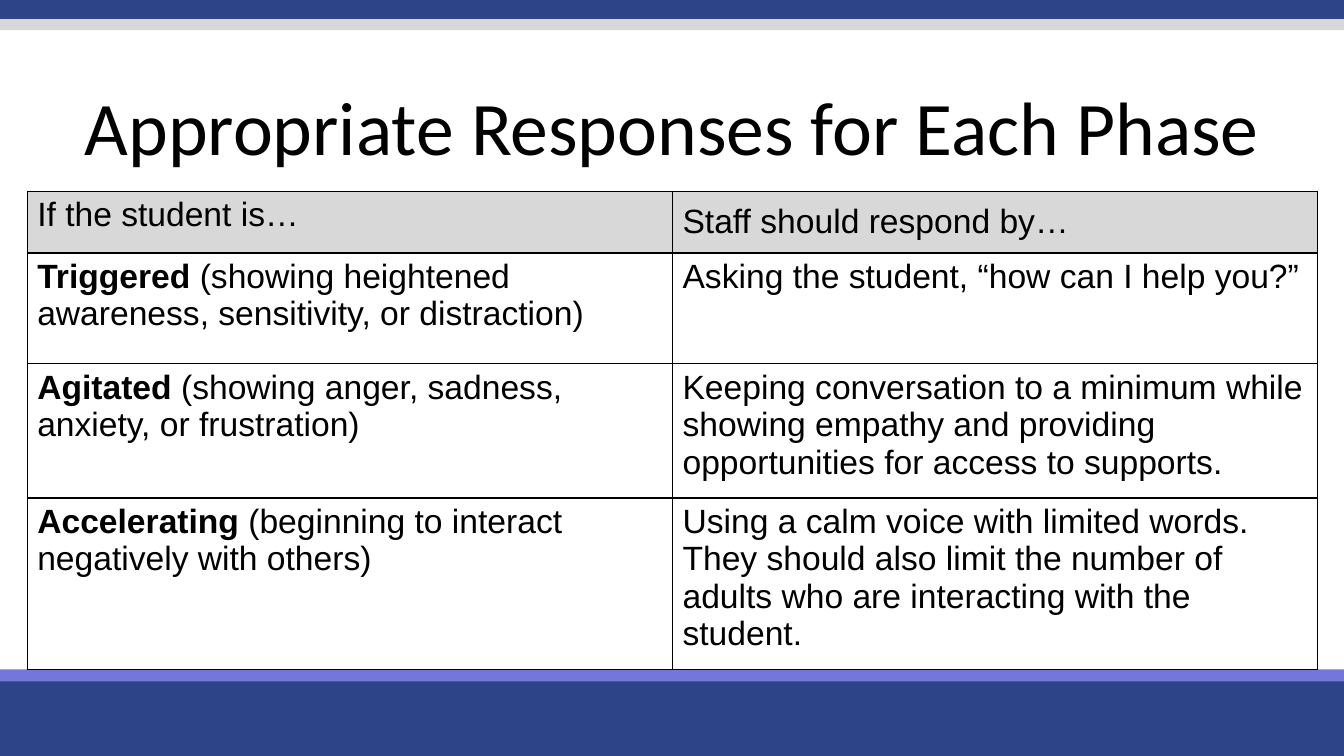
from pptx import Presentation
from pptx.dml.color import RGBColor
from pptx.enum import shapes, text
from pptx.oxml import parse_xml
from pptx.oxml.ns import nsdecls
from pptx.util import Inches, Pt

# Content: each cell is a list of (words, bold) runs
TITLE = "Appropriate Responses for Each Phase"
ROWS = [
    ([("If the student is…", False)],
     [("Staff should respond by…", False)]),
    ([("Triggered", True),
      (" (showing heightened awareness, sensitivity, or distraction)", False)],
     [("Asking the student, “how can I help you?”", False)]),
    ([("Agitated", True),
      (" (showing anger, sadness, anxiety, or frustration)", False)],
     [("Keeping conversation to a minimum while showing empathy and "
       "providing opportunities for access to supports.", False)]),
    ([("Accelerating ", True),
      ("(beginning to interact negatively with others)", False)],
     [("Using a calm voice with limited words. They should also limit the "
       "number of adults who are interacting with the student.", False)]),
]
HEIGHTS = [0.61, 1.1, 1.33, 1.58]
WIDE, HIGH = 13.33, 7.5
LEFT, TOP, COL = 0.27, 1.9, 6.4

THEME = {
    "navy": "2E4488", "violet": "7476DA", "grey": "D8D8D8",
    "white": "FFFFFF", "black": "000000",
    "head": "Calibri", "body": "Arial", "big": 54, "mid": 24, "rule": 1,
}

# Bands across the slide: top, height, colour
BANDS = [(-0.03, 0.22, "navy"), (0.19, 0.11, "grey"),
         (6.7, 0.8, "navy"), (6.64, 0.12, "violet")]


def paint(fill, name):
    fill.solid()
    fill.fore_color.rgb = RGBColor.from_string(THEME[name])


def write(frame, runs, face="body", size="mid", align=None, lead=None):
    frame.word_wrap = True
    para = frame.paragraphs[0]
    para.alignment = align
    para.line_spacing = lead
    for words, bold in runs:
        run = para.add_run()
        run.text = words
        run.font.name = THEME[face]
        run.font.size = Pt(THEME[size])
        run.font.bold = bold
        run.font.color.rgb = RGBColor.from_string(THEME["black"])


def border(cell):
    props = cell._tc.get_or_add_tcPr()
    for spot, side in enumerate(("lnL", "lnR", "lnT", "lnB")):
        props.insert(spot, parse_xml(
            f'<a:{side} {nsdecls("a")} w="{Pt(THEME["rule"])}"><a:solidFill>'
            f'<a:srgbClr val="{THEME["black"]}"/></a:solidFill></a:{side}>'))


def main():
    deck = Presentation()
    deck.slide_width, deck.slide_height = Inches(WIDE), Inches(HIGH)
    slide = deck.slides.add_slide(deck.slide_layouts[6])

    # Bands
    for top, high, name in BANDS:
        band = slide.shapes.add_shape(
            shapes.MSO_SHAPE.RECTANGLE, 0, Inches(top), Inches(WIDE), Inches(high))
        band.shadow.inherit = False
        band.line.fill.background()
        paint(band.fill, name)

    # Title
    box = slide.shapes.add_textbox(0, Inches(0.69), Inches(WIDE), Inches(1.21))
    box.text_frame.vertical_anchor = text.MSO_ANCHOR.MIDDLE
    write(box.text_frame, [(TITLE, False)], face="head", size="big",
          align=text.PP_ALIGN.CENTER, lead=0.9)

    # Table
    grid = slide.shapes.add_table(
        len(ROWS), 2, Inches(LEFT), Inches(TOP),
        Inches(2 * COL), Inches(sum(HEIGHTS))).table
    for col in grid.columns:
        col.width = Inches(COL)
    for r, (row, high) in enumerate(zip(ROWS, HEIGHTS)):
        grid.rows[r].height = Inches(high)
        for c, runs in enumerate(row):
            cell = grid.cell(r, c)
            write(cell.text_frame, runs)
            paint(cell.fill, "white" if r else "grey")
            border(cell)
    grid.cell(0, 1).vertical_anchor = text.MSO_ANCHOR.MIDDLE

    deck.save("out.pptx")


if __name__ == "__main__":
    main()
